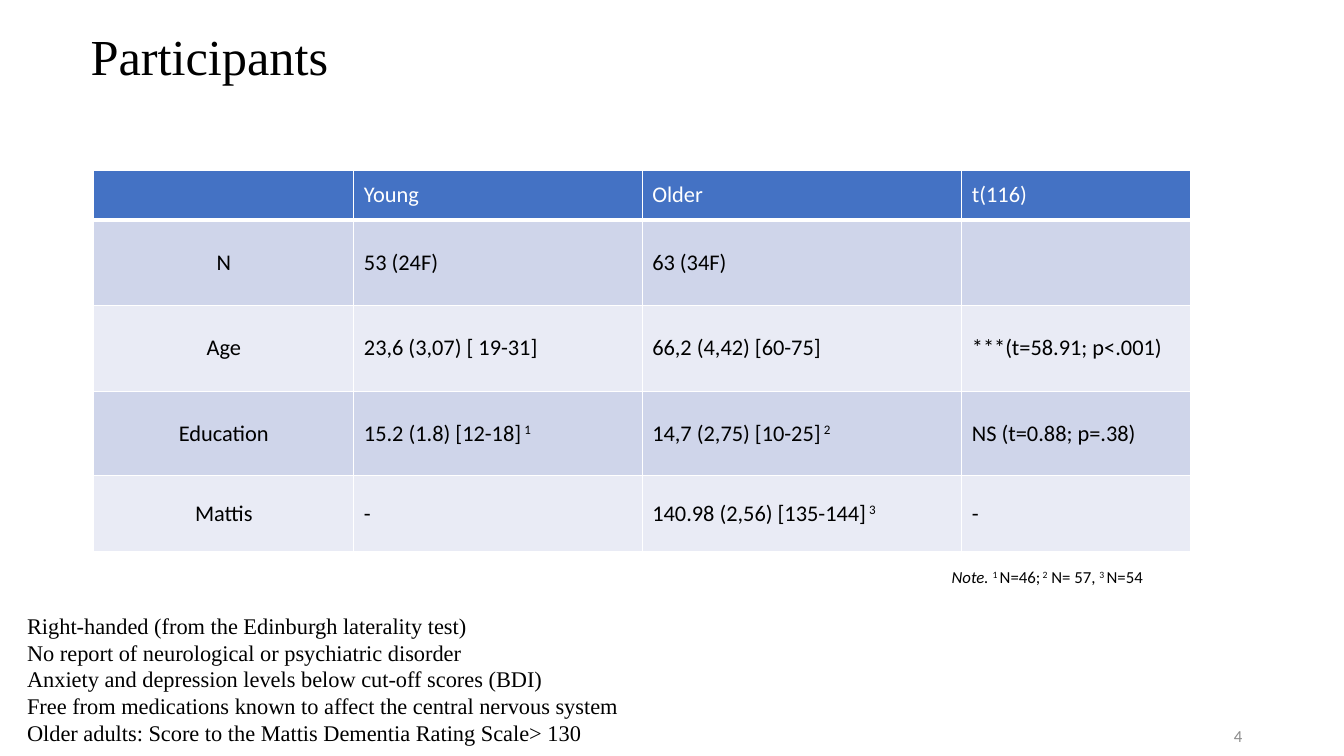
from lxml.etree import SubElement
from pptx import Presentation
from pptx.dml.color import RGBColor as RGB
from pptx.enum.text import MSO_ANCHOR as ANCHOR, PP_ALIGN as ALIGN
from pptx.oxml.ns import qn
from pptx.util import Inches, Pt

TITLE = "Participants"
ROWS = [
    ["", "Young", "Older", "t(116)"],
    ["N", "53 (24F)", "63 (34F)", ""],
    ["Age", "23,6 (3,07) [ 19-31]", "66,2 (4,42) [60-75]", "***(t=58.91; p<.001)"],
    ["Education", "15.2 (1.8) [12-18]^ 1^", "14,7 (2,75) [10-25]^ 2^", "NS (t=0.88; p=.38)"],
    ["Mattis", "-", "140.98 (2,56) [135-144]^ 3^", "-"],
]
COL_WIDTHS = [2.58, 2.86, 3.17, 2.27]
ROW_HEIGHTS = [0.49, 0.85, 0.85, 0.84, 0.75]
NOTE = "Note. ^1 ^N=46;^ 2^ N= 57, ^3 ^N=54"
CRITERIA = [
    "Right-handed (from the Edinburgh laterality test)",
    "No report of neurological or psychiatric disorder",
    "Anxiety and depression levels below cut-off scores (BDI)",
    "Free from medications known to affect the central nervous system",
    "Older adults: Score to the Mattis Dementia Rating Scale> 130",
]
PAGE = "4"

THEME = {
    "serif": "Times New Roman", "sans": "Calibri",
    "title": 36, "body": 16, "small": 12,
    "black": "000000", "white": "FFFFFF", "grey": "8C8C8C",
    "header": "4472C4", "bands": ["CFD5EA", "E9EBF5"],
}


def write(p, text, font, size, color="black", align=ALIGN.LEFT):
    p.alignment = align
    for i, part in enumerate(text.split("^")):
        if not part:
            continue
        r = p.add_run()
        r.text = part
        r.font.name = THEME[font]
        r.font.size = Pt(THEME[size])
        r.font.bold = False
        r.font.color.rgb = RGB.from_string(THEME[color])
        if i % 2:
            r._r.get_or_add_rPr().set("baseline", "30000")


def add_text(s, box, lines, anchor=ANCHOR.TOP, **style):
    tf = s.shapes.add_textbox(*map(Inches, box)).text_frame
    tf.word_wrap = True
    tf.vertical_anchor = anchor
    for i, line in enumerate(lines):
        write(tf.add_paragraph() if i else tf.paragraphs[0], line, **style)
    return tf


def add_borders(cell):
    tcPr = cell._tc.get_or_add_tcPr()
    for side, width in (("L", 1), ("R", 1), ("T", 1), ("B", 3)):
        ln = SubElement(tcPr, qn(f"a:ln{side}"), w=str(Pt(width)))
        fill = SubElement(ln, qn("a:solidFill"))
        SubElement(fill, qn("a:srgbClr"), val=THEME["white"])


def add_participants(s):
    frame = s.shapes.add_table(len(ROWS), len(COL_WIDTHS), Inches(0.93), Inches(1.69),
                               Inches(sum(COL_WIDTHS)), Inches(sum(ROW_HEIGHTS)))
    table = frame.table
    for col, width in zip(table.columns, COL_WIDTHS):
        col.width = Inches(width)
    for y, (row, height) in enumerate(zip(ROWS, ROW_HEIGHTS)):
        table.rows[y].height = Inches(height)
        for x, text in enumerate(row):
            cell = table.cell(y, x)
            cell.vertical_anchor = ANCHOR.MIDDLE
            if y == 0:
                add_borders(cell)
            cell.fill.solid()
            color = THEME["bands"][(y - 1) % 2] if y else THEME["header"]
            cell.fill.fore_color.rgb = RGB.from_string(color)
            write(cell.text_frame.paragraphs[0], text, "sans", "body",
                  "black" if y else "white", ALIGN.LEFT if x else ALIGN.CENTER)


def main():
    prs = Presentation()
    prs.slide_width, prs.slide_height = Inches(13.33), Inches(7.5)
    s = prs.slides.add_slide(prs.slide_layouts[6])
    title = add_text(s, (0.8, 0.37, 11.5, 0.43), [TITLE], ANCHOR.MIDDLE,
                     font="serif", size="title")
    title.paragraphs[0].line_spacing = 0.9
    add_participants(s)
    add_text(s, (0.17, 6.02, 10.59, 1.48), CRITERIA, font="serif", size="body")
    note = add_text(s, (9.34, 5.57, 2.46, 0.3), [NOTE], font="sans", size="small")
    note.paragraphs[0].runs[0].font.italic = True
    add_text(s, (9.42, 7.1, 3, 0.4), [PAGE], ANCHOR.MIDDLE,
             font="sans", size="small", color="grey", align=ALIGN.RIGHT)
    prs.save("out.pptx")


if __name__ == "__main__":
    main()
